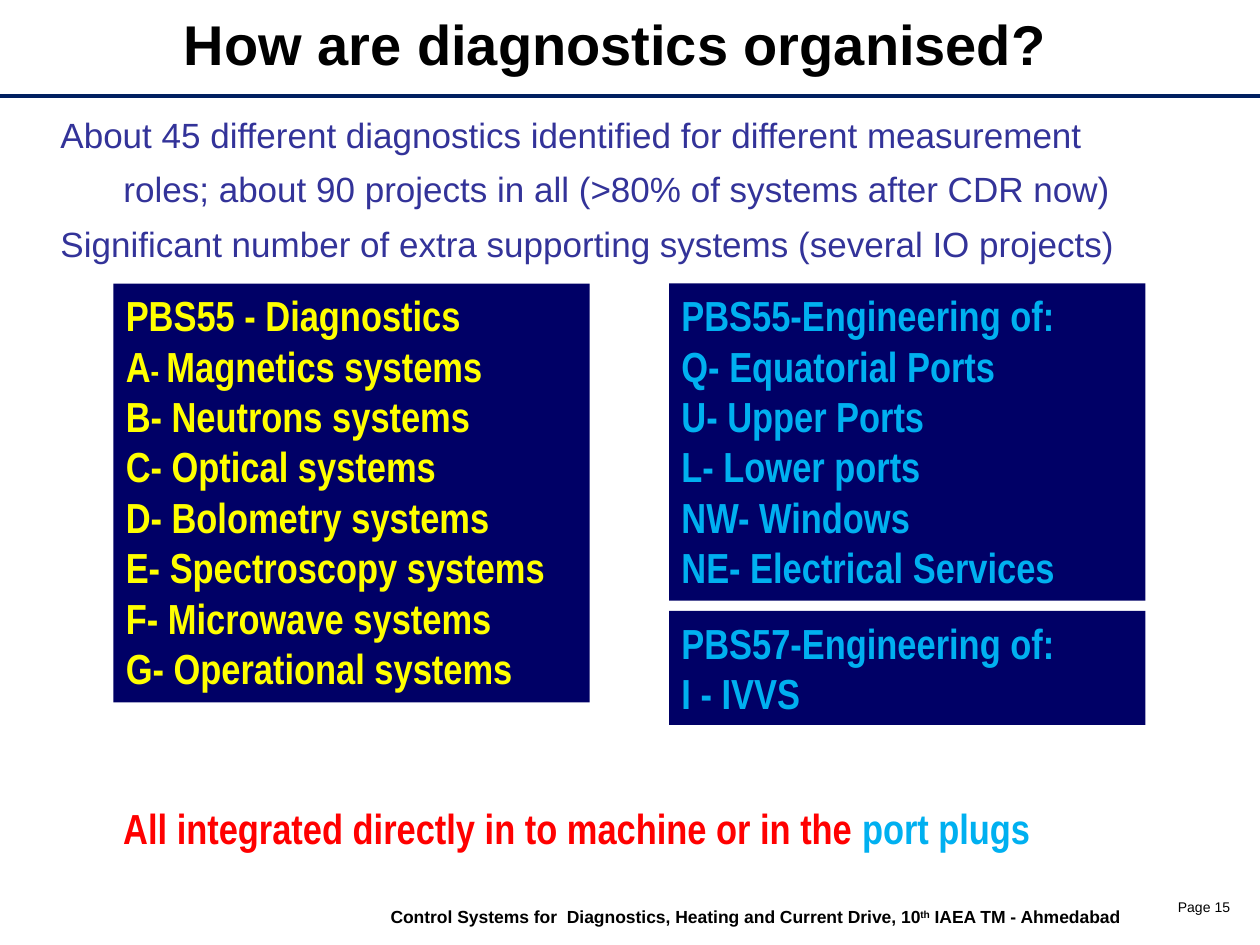
from dataclasses import dataclass
from typing import Optional

from lxml.etree import SubElement
from pptx import Presentation
from pptx.dml.color import RGBColor
from pptx.enum.shapes import MSO_CONNECTOR as Connector, MSO_SHAPE as Shape
from pptx.enum.text import MSO_ANCHOR as Anchor, PP_ALIGN as Align
from pptx.oxml.ns import qn
from pptx.util import Inches, Length, Pt

BLACK = RGBColor(0x00, 0x00, 0x00)
RULE_BLUE = RGBColor(0x00, 0x20, 0x60)
PANEL_NAVY = RGBColor(0x00, 0x00, 0x66)
INTRO_BLUE = RGBColor(0x33, 0x33, 0x99)
YELLOW = RGBColor(0xFF, 0xFF, 0x00)
SKY_BLUE = RGBColor(0x00, 0xB0, 0xF0)
RED = RGBColor(0xFF, 0x00, 0x00)

# The slide is a grid of 100 columns and 75 rows.
COLUMNS, ROWS = 100, 75
SLIDE_WIDTH, SLIDE_HEIGHT = Inches(10), Inches(7.5)

PANEL_WIDTH, PANEL_TOP = 37.8, 22.5
LEFT_PANEL, RIGHT_PANEL = 9, 53.1
LINE_ROWS, PADDING_ROWS, PANEL_GAP = 4.03, 1, 0.8


@dataclass
class Span:
    """A piece of text that differs from its block's style."""
    text: str
    size: Optional[float] = None
    color: Optional[RGBColor] = None
    baseline: Optional[int] = None


@dataclass
class Style:
    size: float
    color: RGBColor
    font: str = "Arial"
    bold: bool = True
    align: Align = Align.LEFT


@dataclass
class Block:
    """Text placed by columns and rows; each line is a list of spans."""
    left: float
    top: float
    width: float
    height: float
    style: Style
    lines: list[list[Span]]
    anchor: Anchor = Anchor.TOP


def column(number: float) -> Length:
    return Length(round(SLIDE_WIDTH * number / COLUMNS))


def row(number: float) -> Length:
    return Length(round(SLIDE_HEIGHT * number / ROWS))


def plain(*texts: str) -> list[list[Span]]:
    return [[Span(text)] for text in texts]


def panel(left: float, top: float, color: RGBColor, lines: list[list[Span]]) -> Block:
    height = len(lines) * LINE_ROWS + PADDING_ROWS
    return Block(left, top, PANEL_WIDTH, height, Style(24, color, "Arial Narrow"), lines)


def write_text(shape, block: Block) -> None:
    frame = shape.text_frame
    frame.word_wrap = True
    frame.vertical_anchor = block.anchor
    style = block.style
    for index, spans in enumerate(block.lines):
        paragraph = frame.add_paragraph() if index else frame.paragraphs[0]
        paragraph.alignment = style.align
        for span in spans:
            run = paragraph.add_run()
            run.text = span.text
            font_values = {"name": style.font, "size": Pt(span.size or style.size), "bold": style.bold}
            for name, value in font_values.items():
                setattr(run.font, name, value)
            run.font.color.rgb = span.color or style.color
            if span.baseline:
                run.font._element.set("baseline", str(span.baseline * 1000))


def draw_block(slide, block: Block, fill: Optional[RGBColor] = None):
    bounds = column(block.left), row(block.top), column(block.width), row(block.height)
    if fill is None:
        shape = slide.shapes.add_textbox(*bounds)
    else:
        shape = slide.shapes.add_shape(Shape.RECTANGLE, *bounds)
        shape.shadow.inherit = False
        shape.fill.solid()
        shape.fill.fore_color.rgb = fill
        shape.line.fill.background()
    write_text(shape, block)
    return shape


def draw_rule(slide, at_row: float) -> None:
    rule = slide.shapes.add_connector(Connector.STRAIGHT, 0, row(at_row), SLIDE_WIDTH, row(at_row))
    rule.line.color.rgb = RULE_BLUE
    rule.line.width = Pt(2)
    SubElement(rule._element.spPr, qn("a:effectLst"))


def draw_intro(slide, block: Block) -> None:
    """Draw the opening statements with a hanging indent and open line spacing."""
    frame = draw_block(slide, block).text_frame
    margins = {"margin_left": 0.13, "margin_top": 0.1, "margin_right": 0.13, "margin_bottom": 0.05}
    for name, value in margins.items():
        setattr(frame, name, Inches(value))
    for paragraph in frame.paragraphs:
        paragraph.line_spacing = 1.3
        properties = paragraph._p.get_or_add_pPr()
        properties.set("marL", str(Inches(0.5)))
        properties.set("indent", str(Inches(-0.5)))


TITLE = Block(5.1, 0, 87.5, 6.8, Style(32, BLACK, align=Align.CENTER),
              plain("How are diagnostics organised?"), Anchor.MIDDLE)
INTRO = Block(3.5, 7, 89, 18.4, Style(20, INTRO_BLUE, bold=False), plain(
    "About 45 different diagnostics identified for different measurement roles; "
    "about 90 projects in all (>80% of systems after CDR now)",
    "Significant number of extra supporting systems (several IO projects)"))
CONCLUSION = Block(8.8, 63.2, 87.4, 5.1, Style(24, RED, "Arial Narrow"), [[
    Span("All integrated directly in to machine or in the "), Span("port plugs", color=SKY_BLUE)]])
FOOTER = Block(28.9, 71.4, 62.1, 2.7, Style(10, BLACK, align=Align.CENTER), [[
    Span("Control Systems for  Diagnostics, Heating and Current Drive, 10"),
    Span("th", baseline=30), Span(" IAEA TM - Ahmedabad")]])
PAGE_NUMBER = Block(92.5, 70.8, 6.4, 2.3, Style(8, BLACK, bold=False), plain("Page 15"))

DIAGNOSTICS = panel(LEFT_PANEL, PANEL_TOP, YELLOW, [
    *plain("PBS55 - Diagnostics"),
    [Span("A"), Span("- ", size=18), Span("Magnetics systems")],
    *plain("B- Neutrons systems", "C- Optical systems", "D- Bolometry systems",
           "E- Spectroscopy systems", "F- Microwave systems", "G- Operational systems")])
PORTS = panel(RIGHT_PANEL, PANEL_TOP, SKY_BLUE, plain(
    "PBS55-Engineering of:", "Q- Equatorial Ports", "U- Upper Ports",
    "L- Lower ports", "NW- Windows", "NE- Electrical Services"))
VIEWING = panel(RIGHT_PANEL, PORTS.top + PORTS.height + PANEL_GAP, SKY_BLUE,
                plain("PBS57-Engineering of:", "I - IVVS"))


def main() -> None:
    presentation = Presentation()
    presentation.slide_width, presentation.slide_height = SLIDE_WIDTH, SLIDE_HEIGHT
    slide = presentation.slides.add_slide(presentation.slide_layouts[6])
    draw_rule(slide, 7.6)
    for block in (PAGE_NUMBER, FOOTER, TITLE, CONCLUSION):
        draw_block(slide, block)
    draw_intro(slide, INTRO)
    for block in (DIAGNOSTICS, PORTS, VIEWING):
        draw_block(slide, block, PANEL_NAVY)
    presentation.save("out.pptx")


if __name__ == "__main__":
    main()
